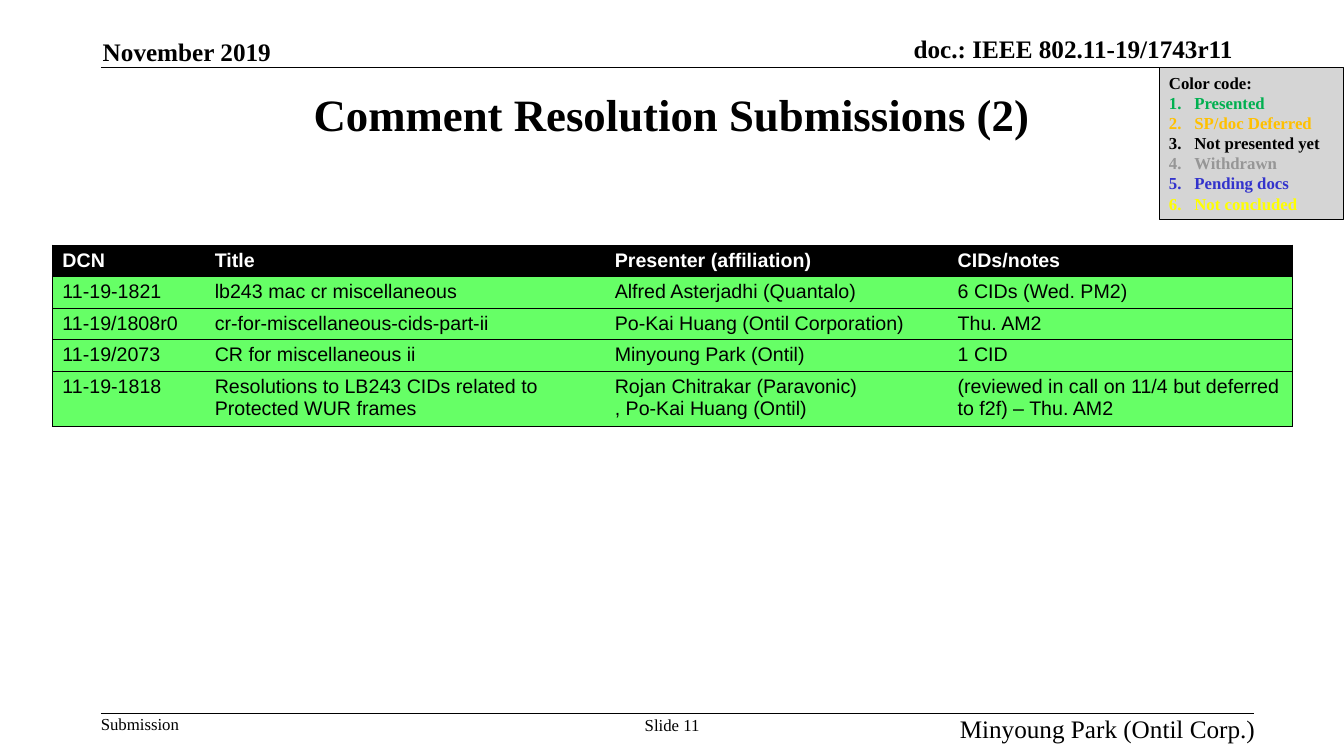
from copy import deepcopy

from lxml import etree
from pptx import Presentation
from pptx.dml.color import RGBColor
from pptx.enum import shapes, text
from pptx.oxml import ns
from pptx.util import Cm, Pt

BLACK = RGBColor(0x00, 0x00, 0x00)
WHITE = RGBColor(0xFF, 0xFF, 0xFF)
ROW_GREEN = RGBColor(0x66, 0xFF, 0x66)
LEGEND_GRAY = RGBColor(0xD5, 0xD5, 0xD5)
GREEN = RGBColor(0x00, 0xB0, 0x50)
ORANGE = RGBColor(0xFF, 0xC0, 0x00)
GRAY = RGBColor(0x96, 0x96, 0x96)
BLUE = RGBColor(0x33, 0x33, 0xCC)
YELLOW = RGBColor(0xFF, 0xFF, 0x00)

LEFT, CENTER, RIGHT = text.PP_ALIGN.LEFT, text.PP_ALIGN.CENTER, text.PP_ALIGN.RIGHT
TOP, MIDDLE, BOTTOM = text.MSO_ANCHOR.TOP, text.MSO_ANCHOR.MIDDLE, text.MSO_ANCHOR.BOTTOM


def write(paragraph, words, size=12, color=BLACK, bold=False, font="Times New Roman", align=LEFT):
    paragraph.text = words
    paragraph.alignment = align
    for run in paragraph.runs:
        run.font.name = font
        run.font.size = Pt(size)
        run.font.bold = bold
        run.font.color.rgb = color
    for line_break in paragraph._p.findall(ns.qn("a:br")):
        line_break.append(deepcopy(paragraph.runs[0].font._element))


def add_border(cell, position, side, visible):
    line = etree.Element(ns.qn(f"a:ln{side}"), w=str(Pt(1)))
    if visible:
        fill = etree.SubElement(line, ns.qn("a:solidFill"))
        etree.SubElement(fill, ns.qn("a:srgbClr"), val=str(BLACK))
    else:
        etree.SubElement(line, ns.qn("a:noFill"))
    cell._tc.get_or_add_tcPr().insert(position, line)


presentation = Presentation()
presentation.slide_width = Cm(33.87)
presentation.slide_height = Cm(19.05)
slide = presentation.slides.add_slide(presentation.slide_layouts[6])

for left, right, y in [(2.54, 31.32, 1.7), (2.54, 31.6, 17.98)]:
    rule = slide.shapes.add_connector(shapes.MSO_CONNECTOR.STRAIGHT, Cm(left), Cm(y), Cm(right), Cm(y))
    rule.line.color.rgb = BLACK
    rule.line.width = Pt(1)
    etree.SubElement(rule._element.spPr, ns.qn("a:effectLst"))

labels = [
    ("doc.: IEEE 802.11-19/1743r11", 21.62, 0.84, 9.45, 0.76, BOTTOM, False, 18, True, RIGHT),
    ("November 2019", 2.59, 0.91, 5, 0.76, BOTTOM, True, 18, True, LEFT),
    ("Comment Resolution Submissions (2)", 2.54, 1.7, 28.78, 2.34, MIDDLE, True, 32, True, CENTER),
    ("Submission", 2.54, 17.98, 2.01, 0.51, TOP, False, 12, False, LEFT),
    ("Slide 11", 16.23, 18.01, 1.42, 0.51, TOP, False, 12, False, CENTER),
    ("Minyoung Park (Ontil Corp.)", 21.44, 17.98, 10.19, 0.51, TOP, True, 18, False, RIGHT),
]
for words, left, top, width, height, anchor, wrap, size, bold, align in labels:
    label = slide.shapes.add_textbox(Cm(left), Cm(top), Cm(width), Cm(height))
    frame = label.text_frame
    frame.margin_left = frame.margin_right = frame.margin_top = frame.margin_bottom = 0
    frame.vertical_anchor = anchor
    frame.word_wrap = wrap
    write(frame.paragraphs[0], words, size=size, bold=bold, align=align)

submissions = [
    ("DCN", "Title", "Presenter (affiliation)", "CIDs/notes"),
    ("11-19-1821", "lb243 mac cr miscellaneous", "Alfred Asterjadhi (Quantalo)", "6 CIDs (Wed. PM2)"),
    ("11-19/1808r0", "cr-for-miscellaneous-cids-part-ii", "Po-Kai Huang (Ontil Corporation)", "Thu. AM2"),
    ("11-19/2073", "CR for miscellaneous ii", "Minyoung Park (Ontil)", "1 CID"),
    (
        "11-19-1818",
        "Resolutions to LB243 CIDs related to Protected WUR frames",
        "Rojan Chitrakar (Paravonic)\v, Po-Kai Huang (Ontil)",
        "(reviewed in call on 11/4 but deferred to f2f) – Thu. AM2",
    ),
]
column_widths = [3.84, 10.08, 8.64, 8.69]
row_height = 0.63
table = slide.shapes.add_table(
    len(submissions), len(column_widths), Cm(1.32), Cm(6.18),
    Cm(sum(column_widths)), Cm(row_height * len(submissions))
).table
for column, width in zip(table.columns, column_widths):
    column.width = Cm(width)
for row in table.rows:
    row.height = Cm(row_height)

last_column = len(column_widths) - 1
for row_index, submission in enumerate(submissions):
    header = row_index == 0
    for column_index, words in enumerate(submission):
        cell = table.cell(row_index, column_index)
        cell.margin_top = cell.margin_bottom = Cm(0.1)
        cell.fill.solid()
        cell.fill.fore_color.rgb = BLACK if header else ROW_GREEN
        write(cell.text_frame.paragraphs[0], words, size=14, font="Arial",
              color=WHITE if header else BLACK, bold=header)
        borders = {"L": column_index == 0, "R": column_index == last_column, "T": True, "B": True}
        for position, (side, visible) in enumerate(borders.items()):
            add_border(cell, position, side, visible)

legend = slide.shapes.add_shape(shapes.MSO_SHAPE.RECTANGLE, Cm(29.21), Cm(1.7), Cm(4.65), Cm(3.84))
legend.shadow.inherit = False
legend.fill.solid()
legend.fill.fore_color.rgb = LEGEND_GRAY
legend.line.color.rgb = BLACK
legend.line.width = Pt(0.75)
legend.text_frame.vertical_anchor = TOP
legend.text_frame.word_wrap = True
write(legend.text_frame.paragraphs[0], "Color code:", bold=True)

statuses = [
    ("Presented", GREEN),
    ("SP/doc Deferred", ORANGE),
    ("Not presented yet", BLACK),
    ("Withdrawn", GRAY),
    ("Pending docs", BLUE),
    ("Not concluded", YELLOW),
]
for status, color in statuses:
    paragraph = legend.text_frame.add_paragraph()
    properties = paragraph._p.get_or_add_pPr()
    properties.set("marL", str(Cm(0.64)))
    properties.set("indent", str(Cm(-0.64)))
    etree.SubElement(properties, ns.qn("a:buFont"), typeface="+mj-lt")
    etree.SubElement(properties, ns.qn("a:buAutoNum"), type="arabicPeriod")
    write(paragraph, status, color=color, bold=True)

presentation.save("out.pptx")
